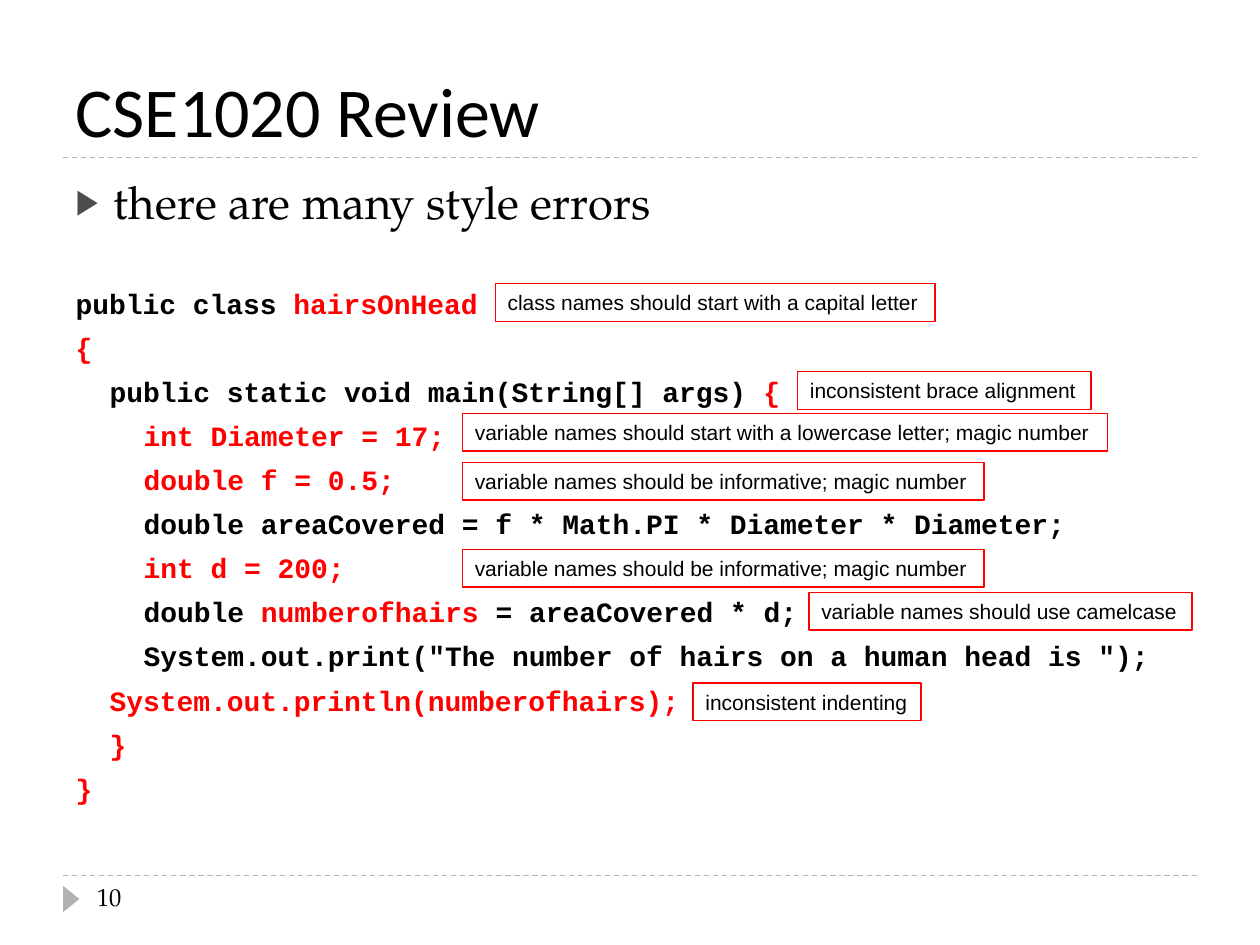
from dataclasses import dataclass

from lxml import etree
from pptx import Presentation
from pptx.dml.color import RGBColor
from pptx.enum import dml, shapes, text
from pptx.oxml import ns
from pptx.util import Inches, Pt


@dataclass(frozen=True)
class Theme:
    """Colours, fonts and type sizes of the deck."""
    ink: RGBColor = RGBColor(0x00, 0x00, 0x00)
    error: RGBColor = RGBColor(0xFF, 0x00, 0x00)
    rule: RGBColor = RGBColor(0xB2, 0xB2, 0xB2)
    bullet: str = "4D4D4D"
    title_font: str = "Calibri"
    body_font: str = "TeX Gyre Pagella"
    code_font: str = "Courier New"
    note_font: str = "Arial"
    title_size: int = 40
    body_size: int = 26
    code_size: int = 16
    number_size: int = 14
    note_size: int = 12


CODE = [
    (0, "public class |hairsOnHead"),
    (0, "|{"),
    (1, "public static void main(String[] args) |{"),
    (2, "|int Diameter = 17;"),
    (2, "|double f = 0.5;"),
    (2, "double areaCovered = f * Math.PI * Diameter * Diameter;"),
    (2, "|int d = 200;"),
    (2, "double |numberofhairs| = areaCovered * d;"),
    (2, 'System.out.print("The number of hairs on a human head is ");'),
    (1, "|System.out.println(numberofhairs);"),
    (1, "|}"),
    (0, "|}"),
]

UNINFORMATIVE = "variable names should be informative; magic number"
NOTES = [
    (3.93, 2.25, 3.49, "class names should start with a capital letter"),
    (6.33, 2.95, 2.33, "inconsistent brace alignment"),
    (3.67, 3.28, 5.12, "variable names should start with a lowercase letter; magic number"),
    (3.67, 3.67, 4.14, UNINFORMATIVE),
    (3.67, 4.36, 4.14, UNINFORMATIVE),
    (6.42, 4.7, 3.04, "variable names should use camelcase"),
    (5.5, 5.42, 1.81, "inconsistent indenting"),
]


class ReviewPage:
    """Draws the elements of a code review slide in one theme."""

    def __init__(self, page, theme):
        self.page = page
        self.theme = theme

    def style(self, paragraph, font, size, bold=False):
        """Set the font and left alignment of a paragraph."""
        paragraph.alignment = text.PP_ALIGN.LEFT
        paragraph.font.name = font
        paragraph.font.size = Pt(size)
        paragraph.font.bold = bold
        paragraph.font.color.rgb = self.theme.ink

    def place(self, box, left, top, width, height):
        """Move and size a placeholder."""
        box.left, box.top = Inches(left), Inches(top)
        box.width, box.height = Inches(width), Inches(height)

    def rule(self, top):
        """Draw a dashed line across the page."""
        line = self.page.shapes.add_connector(
            shapes.MSO_CONNECTOR.STRAIGHT, Inches(0.5), Inches(top), Inches(9.5), Inches(top))
        line.line.color.rgb = self.theme.rule
        line.line.width = Pt(0.75)
        line.line.dash_style = dml.MSO_LINE.DASH
        etree.SubElement(line._element.spPr, ns.qn("a:effectLst"))

    def title(self, words):
        """Fill the title placeholder."""
        box = self.page.shapes.title
        self.place(box, 0.5, 0.17, 9, 1.08)
        box.text_frame.text = words
        box.text_frame.vertical_anchor = text.MSO_ANCHOR.BOTTOM
        self.style(box.text_frame.paragraphs[0], self.theme.title_font, self.theme.title_size)

    def indent(self, paragraph, margin, hanging=0, bullet=None):
        """Set the indents of a paragraph and its bullet, if any."""
        properties = paragraph._p.get_or_add_pPr()
        properties.set("marL", str(Inches(margin)))
        properties.set("indent", str(-Inches(hanging)))
        if bullet:
            colour = etree.SubElement(properties, ns.qn("a:buClr"))
            etree.SubElement(colour, ns.qn("a:srgbClr"), val=self.theme.bullet)
            etree.SubElement(properties, ns.qn("a:buSzPct"), val="76000")
            etree.SubElement(properties, ns.qn("a:buFont"), typeface=self.theme.note_font)
            etree.SubElement(properties, ns.qn("a:buChar"), char=bullet)
        else:
            etree.SubElement(properties, ns.qn("a:buNone"))

    def body(self, heading, code):
        """Fill the body placeholder with a bullet and a code listing."""
        box = self.page.placeholders[1]
        self.place(box, 0.5, 1.33, 9, 5.4)
        frame = box.text_frame
        frame.auto_size = text.MSO_AUTO_SIZE.NONE
        first = frame.paragraphs[0]
        first.text = heading
        first.space_before = Pt(6)
        self.indent(first, 0.3, 0.3, "▶")
        self.style(first, self.theme.body_font, self.theme.body_size)
        for row, (level, line) in enumerate(code):
            paragraph = frame.add_paragraph()
            paragraph.space_before = Pt(6 if row else 33)
            paragraph.line_spacing = Pt(19.2)
            self.indent(paragraph, level * 0.27)
            self.style(paragraph, self.theme.code_font, self.theme.code_size, bold=True)
            for index, part in enumerate(line.split("|")):
                if part:
                    span = paragraph.add_run()
                    span.text = part
                    if index % 2:
                        span.font.color.rgb = self.theme.error

    def note(self, left, top, width, words):
        """Draw a red-framed remark."""
        box = self.page.shapes.add_shape(
            shapes.MSO_SHAPE.RECTANGLE, Inches(left), Inches(top), Inches(width), Inches(0.3))
        box.shadow.inherit = False
        box.fill.background()
        box.line.color.rgb = self.theme.error
        box.line.width = Pt(0.75)
        frame = box.text_frame
        frame.word_wrap = False
        frame.vertical_anchor = text.MSO_ANCHOR.TOP
        frame.text = words
        self.style(frame.paragraphs[0], self.theme.note_font, self.theme.note_size)

    def number(self, words):
        """Draw the page number and its marker."""
        marker = self.page.shapes.add_shape(
            shapes.MSO_SHAPE.ISOSCELES_TRIANGLE,
            Inches(0.46), Inches(7.07), Inches(0.21), Inches(0.13))
        marker.rotation = 90
        marker.shadow.inherit = False
        marker.fill.solid()
        marker.fill.fore_color.rgb = self.theme.rule
        marker.line.fill.background()
        box = self.page.shapes.add_textbox(Inches(0.67), Inches(6.95), Inches(2.17), Inches(0.4))
        box.text_frame.word_wrap = True
        box.text_frame.text = words
        self.style(box.text_frame.paragraphs[0], self.theme.body_font, self.theme.number_size)


def main():
    """Build and save the slide."""
    deck = Presentation()
    deck.slide_width, deck.slide_height = Inches(10), Inches(7.5)
    review = ReviewPage(deck.slides.add_slide(deck.slide_layouts[1]), Theme())
    for top in (6.95, 1.25):
        review.rule(top)
    review.title("CSE1020 Review")
    review.number("10")
    review.body("there are many style errors", CODE)
    for note in NOTES:
        review.note(*note)
    deck.save("out.pptx")


if __name__ == "__main__":
    main()
